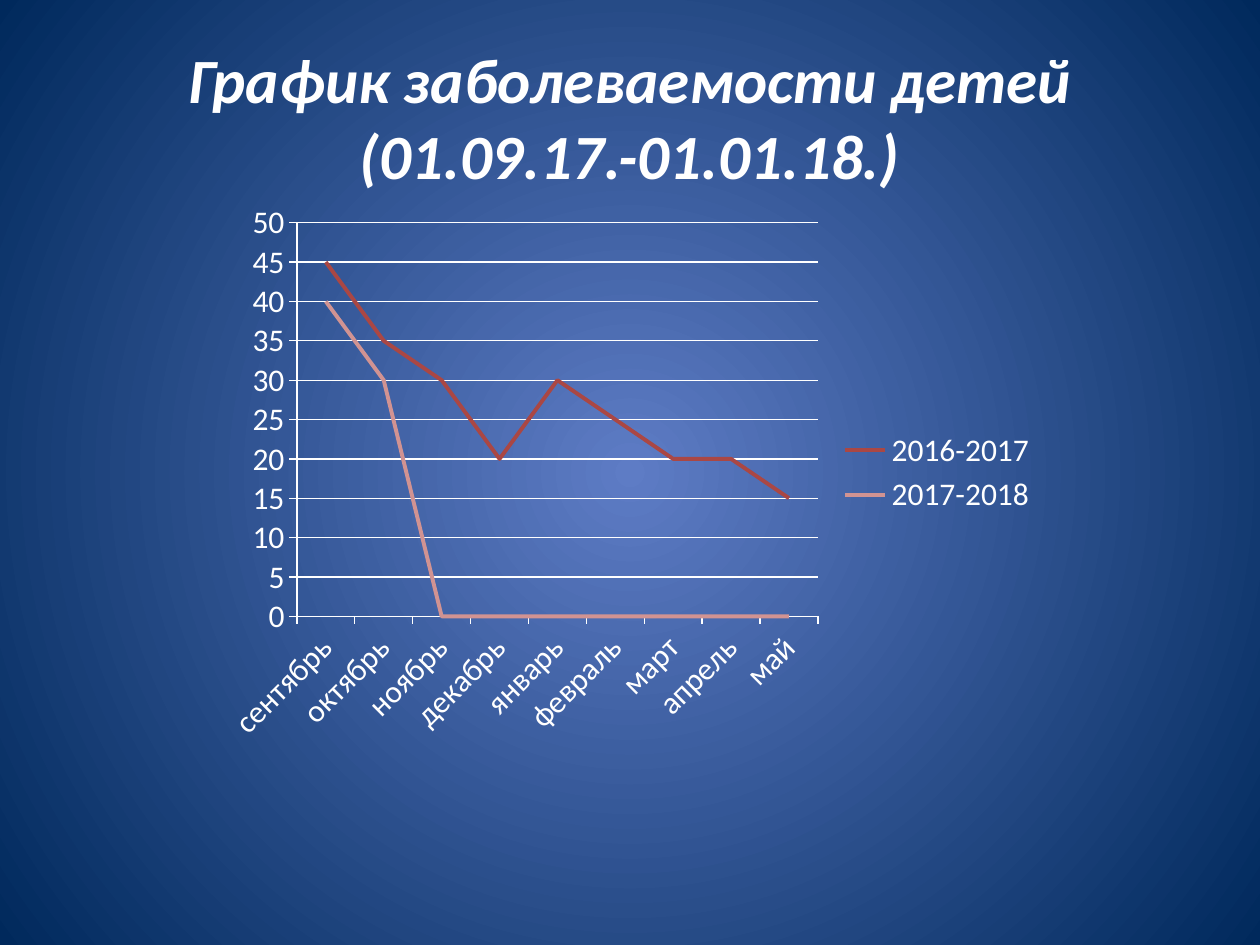
from dataclasses import dataclass

from lxml.etree import SubElement
from pptx import Presentation
from pptx.chart.data import CategoryChartData
from pptx.dml.color import RGBColor
from pptx.enum.chart import XL_CHART_TYPE, XL_LEGEND_POSITION, XL_TICK_MARK
from pptx.enum.text import MSO_ANCHOR, PP_ALIGN
from pptx.oxml.ns import qn
from pptx.util import Pt

WHITE = RGBColor(0xFF, 0xFF, 0xFF)
RED = RGBColor(0xAA, 0x47, 0x44)
PINK = RGBColor(0xD1, 0x93, 0x92)
CENTER_BLUE = RGBColor(0x5E, 0x7C, 0xC5)
EDGE_BLUE = RGBColor(0x00, 0x29, 0x5C)

TITLE_FONT = {"name": "Calibri", "size": Pt(36), "bold": True, "italic": True}
CHART_FONT = {"name": "Calibri", "size": Pt(18), "bold": False}
MONTHS = ["сентябрь", "октябрь", "ноябрь", "декабрь", "январь",
          "февраль", "март", "апрель", "май"]


@dataclass(frozen=True)
class Season:
    name: str
    values: tuple
    color: RGBColor


SEASONS = [
    Season("2016-2017", (45, 35, 30, 20, 30, 25, 20, 20, 15), RED),
    Season("2017-2018", (40, 30) + (None,) * 7, PINK),
]


def format_font(font, values: dict) -> None:
    for name, value in values.items():
        setattr(font, name, value)
    font.color.rgb = WHITE


def format_line(line, color: RGBColor, width: float) -> None:
    line.color.rgb = color
    line.width = Pt(width)


def set_background(s) -> None:
    fill = s.background.fill
    fill.gradient()
    for stop, color in zip(fill.gradient_stops, (CENTER_BLUE, EDGE_BLUE)):
        stop.color.rgb = color
    grad = s.background._cSld.find(".//" + qn("a:gradFill"))
    grad.remove(grad.find(qn("a:lin")))
    circle = SubElement(grad, qn("a:path"), path="circle")
    SubElement(circle, qn("a:fillToRect"), dict.fromkeys("ltrb", "50000"))


def add_title(s, text: str) -> None:
    sp = s.shapes.title
    sp.left, sp.top, sp.width, sp.height = Pt(36), Pt(21.6), Pt(648), Pt(90)
    tf = sp.text_frame
    tf.vertical_anchor = MSO_ANCHOR.MIDDLE
    p = tf.paragraphs[0]
    p.text = text
    p.alignment = PP_ALIGN.CENTER
    for r in p.runs:
        format_font(r.font, TITLE_FONT)


def add_line_chart(s, seasons: list[Season]) -> None:
    data = CategoryChartData()
    data.categories = MONTHS
    for season in seasons:
        data.add_series(season.name, season.values)
    chart = s.shapes.add_chart(XL_CHART_TYPE.LINE, Pt(120), Pt(110),
                               Pt(480), Pt(320), data).chart
    chart.has_title = False
    format_font(chart.font, CHART_FONT)
    chart.has_legend = True
    chart.legend.position = XL_LEGEND_POSITION.RIGHT
    chart.legend.include_in_layout = False
    format_font(chart.legend.font, CHART_FONT)
    for axis in (chart.category_axis, chart.value_axis):
        axis.major_tick_mark = XL_TICK_MARK.OUTSIDE
        axis.minor_tick_mark = XL_TICK_MARK.NONE
        format_font(axis.tick_labels.font, CHART_FONT)
        format_line(axis.format.line, WHITE, 0.75)
    axis = chart.value_axis
    axis.minimum_scale, axis.maximum_scale, axis.major_unit = 0, 50, 5
    format_line(axis.major_gridlines.format.line, WHITE, 0.75)
    plot = chart.plots[0]
    plot.vary_by_categories = False
    for series, season in zip(plot.series, seasons):
        series.smooth = False
        format_line(series.format.line, season.color, 2.25)
    chart._chartSpace.find(".//" + qn("c:dispBlanksAs")).set("val", "zero")


def main() -> None:
    prs = Presentation()
    prs.slide_width, prs.slide_height = Pt(720), Pt(540)
    s = prs.slides.add_slide(prs.slide_layouts[5])
    set_background(s)
    add_title(s, "График заболеваемости детей\v(01.09.17.-01.01.18.)")
    add_line_chart(s, SEASONS)
    prs.save("out.pptx")


if __name__ == "__main__":
    main()
